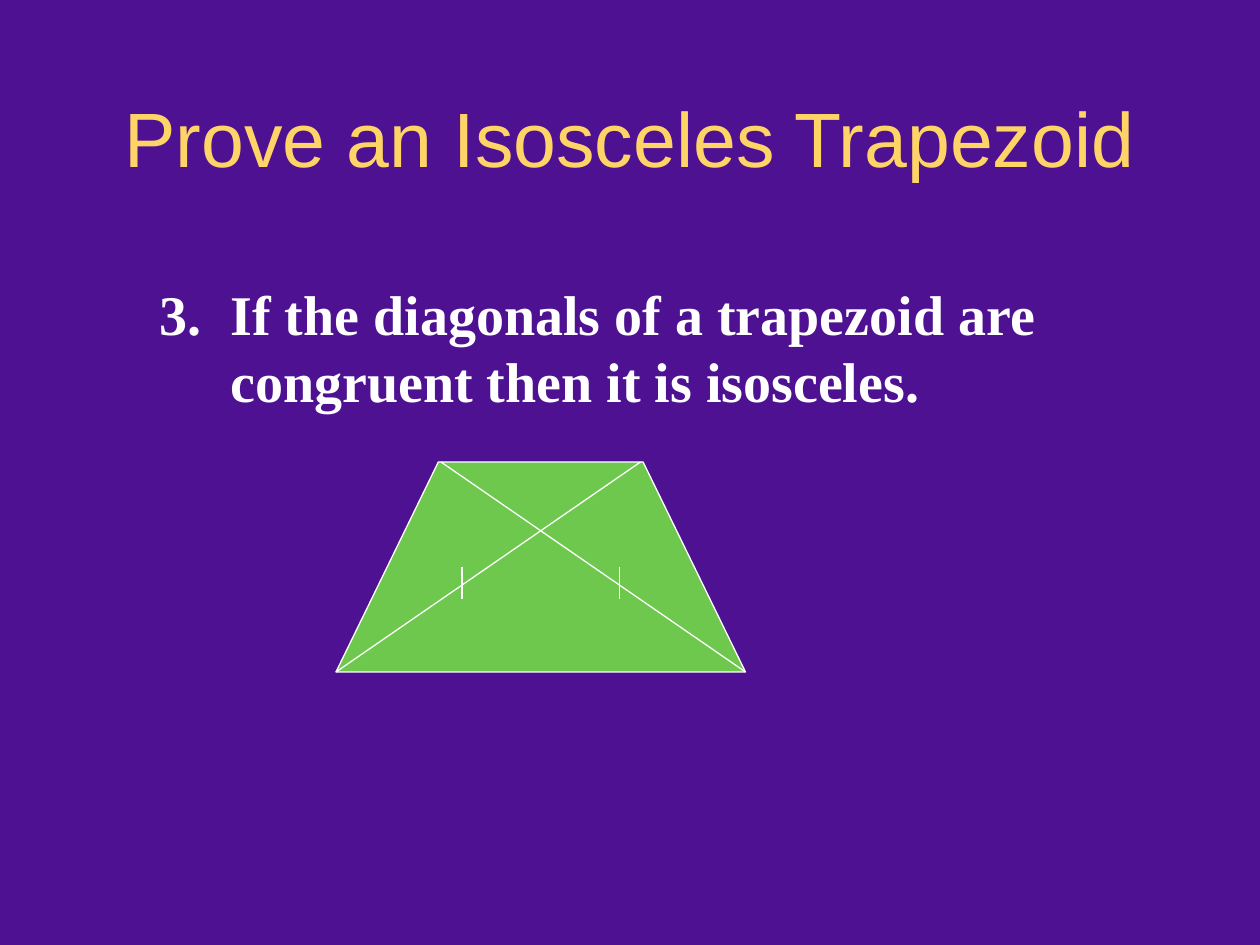
import pptx
import pptx.dml.color
import pptx.enum.shapes
import pptx.enum.text
import pptx.util
from lxml import etree

Pt = pptx.util.Pt
ALIGN = pptx.enum.text.PP_ALIGN
WHITE = "FFFFFF"


def color(value):
    return pptx.dml.color.RGBColor.from_string(value)


def add_text(text, left, top, width, height, font, size, fill, bold=False,
             align=ALIGN.LEFT, line_spacing=1.0, hanging=0):
    """Add a one-paragraph text box; hanging is the indent of wrapped lines."""
    shape = slide.shapes.add_textbox(Pt(left), Pt(top), Pt(width), Pt(height))
    shape.text_frame.word_wrap = True
    paragraph = shape.text_frame.paragraphs[0]
    paragraph.alignment = align
    paragraph.line_spacing = line_spacing
    if hanging:
        properties = paragraph._p.get_or_add_pPr()
        properties.set("marL", str(Pt(hanging)))
        properties.set("indent", str(-Pt(hanging)))
    run = paragraph.add_run()
    run.text = text
    run.font.name = font
    run.font.size = Pt(size)
    run.font.bold = bold
    run.font.color.rgb = color(fill)


presentation = pptx.Presentation()
presentation.slide_width = Pt(720)
presentation.slide_height = Pt(540)
slide = presentation.slides.add_slide(presentation.slide_layouts[6])
slide.background.fill.solid()
slide.background.fill.fore_color.rgb = color("4E1192")

# Trapezoid
top, bottom, left, right = 264, 384, 192, 426
builder = slide.shapes.build_freeform(Pt(right), Pt(bottom))
builder.add_line_segments(
    [(Pt(367.5), Pt(top)), (Pt(250.5), Pt(top)), (Pt(left), Pt(bottom))], close=True)
trapezoid = builder.convert_to_shape()
trapezoid.shadow.inherit = False
trapezoid.fill.solid()
trapezoid.fill.fore_color.rgb = color("6EC84E")
trapezoid.line.color.rgb = color(WHITE)
trapezoid.line.width = Pt(0.75)

add_text("3.\tIf the diagonals of a trapezoid are congruent then it is isosceles.",
         84, 156, 564, 85, "Times New Roman", 32, WHITE, bold=True, hanging=40.5)

# Diagonals, then their congruence marks
for x1, y1, x2, y2 in [
    (252, top, right, bottom),
    (left, bottom, 366, top),
    (264, 324, 264, 342),
    (354, 324, 354, 342),
]:
    line = slide.shapes.add_connector(
        pptx.enum.shapes.MSO_CONNECTOR.STRAIGHT, Pt(x1), Pt(y1), Pt(x2), Pt(y2))
    line.line.color.rgb = color(WHITE)
    line.line.width = Pt(0.75)
    etree.SubElement(line._element.spPr, pptx.oxml.ns.qn("a:effectLst"))

add_text("Prove an Isosceles Trapezoid", 54, 54, 612, 78, "Arial", 44, "FFD467",
         align=ALIGN.CENTER, line_spacing=0.9)

presentation.save("out.pptx")
